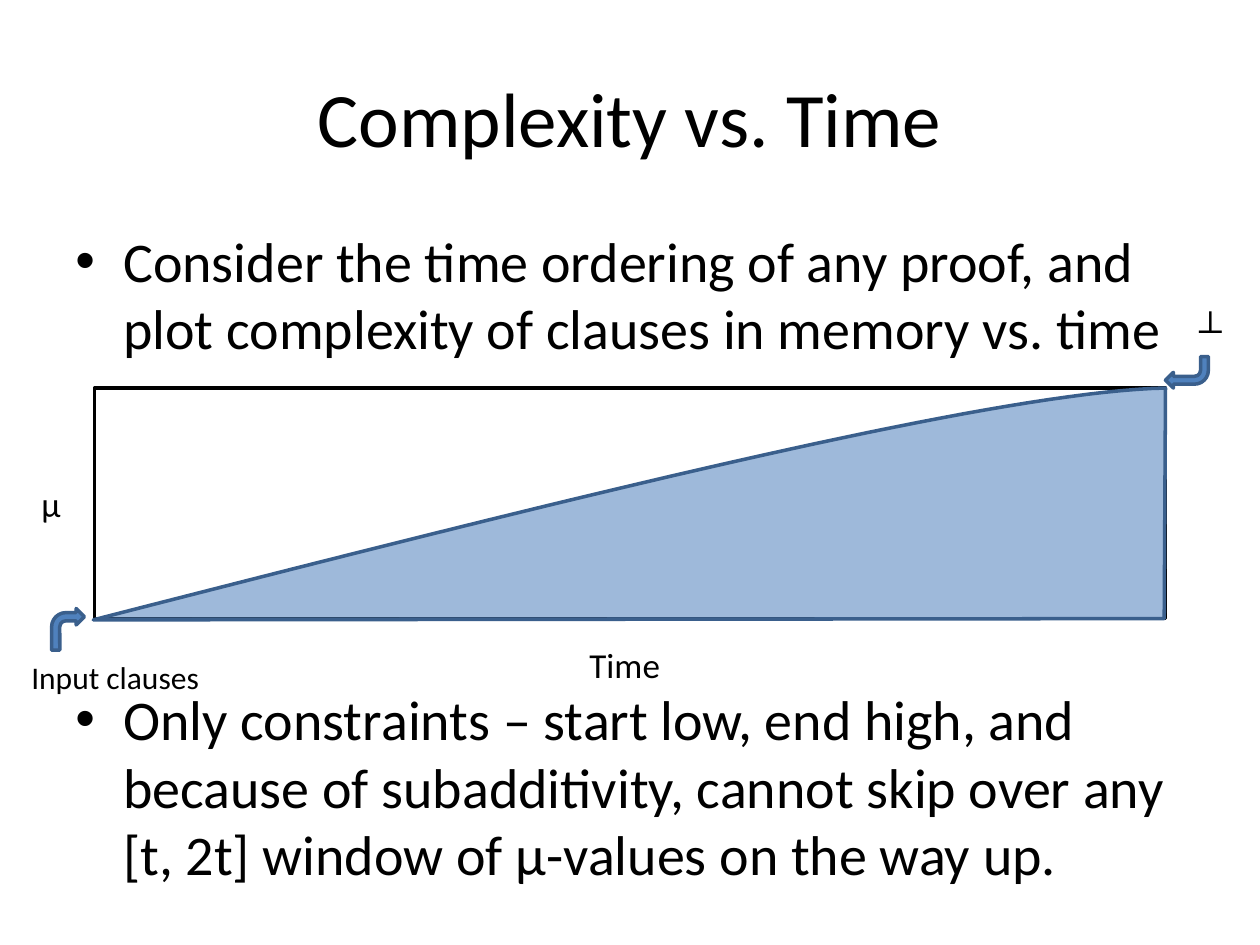
from lxml import etree
from pptx import Presentation
from pptx.dml.color import RGBColor
from pptx.enum.shapes import MSO_SHAPE as SHAPE
from pptx.enum.text import MSO_ANCHOR as ANCHOR, PP_ALIGN as ALIGN
from pptx.oxml.ns import qn
from pptx.util import Inches, Pt

BLACK = RGBColor(0x00, 0x00, 0x00)
BLUE = RGBColor(0x4F, 0x81, 0xBD)
DARK_BLUE = RGBColor(0x3A, 0x5F, 0x8C)


def add_text(tf, text, size=20, font="Calibri", align=ALIGN.LEFT,
             bullet=False, before=0, new=False):
    p = tf.add_paragraph() if new else tf.paragraphs[0]
    p.alignment = align
    p.space_before = Pt(before)
    r = p.add_run()
    r.text = text
    r.font.size = Pt(size)
    r.font.name = font
    r.font.color.rgb = BLACK
    if bullet:
        pPr = p._p.get_or_add_pPr()
        pPr.set("marL", str(Inches(0.38)))
        pPr.set("indent", str(-Inches(0.38)))
        etree.SubElement(pPr, qn("a:buFont")).set("typeface", "Arial")
        etree.SubElement(pPr, qn("a:buChar")).set("char", "•")


def style(s, fill, line):
    s.shadow.inherit = False
    if fill is None:
        s.fill.background()
    else:
        s.fill.solid()
        s.fill.fore_color.rgb = fill
    s.line.color.rgb = line
    s.line.width = Pt(2)


prs = Presentation()
prs.slide_width, prs.slide_height = Inches(10), Inches(7.5)
slide = prs.slides.add_slide(prs.slide_layouts[5])
shapes = slide.shapes

# Title
title = shapes.title
title.left, title.top = Inches(0.5), Inches(0.3)
title.width, title.height = Inches(9), Inches(1.25)
title.text_frame.vertical_anchor = ANCHOR.MIDDLE
add_text(title.text_frame, "Complexity vs. Time", size=44, align=ALIGN.CENTER)

# Bullets, with room for the plot between them
body = shapes.add_textbox(Inches(0.5), Inches(1.75), Inches(9), Inches(5.83))
tf = body.text_frame
tf.word_wrap = True
add_text(tf, "Consider the time ordering of any proof, and plot complexity "
         "of clauses in memory vs. time", size=32, bullet=True)
add_text(tf, "Only constraints – start low, end high, and because of "
         "subadditivity, cannot skip over any [t, 2t] window of μ-values "
         "on the way up.", size=32, bullet=True, before=185, new=True)

# Plot frame
frame = shapes.add_shape(SHAPE.RECTANGLE, Inches(0.75), Inches(3.08),
                         Inches(8.5), Inches(1.83))
style(frame, None, BLACK)

# Area under the complexity curve, a cubic Bezier
controls = [(0.74, 4.92), (4.29, 4.01), (7.85, 3.11), (9.25, 3.08)]
STEPS = 40
curve = []
for i in range(STEPS + 1):
    t = i / STEPS
    weights = ((1 - t) ** 3, 3 * t * (1 - t) ** 2, 3 * t * t * (1 - t), t ** 3)
    curve.append(tuple(Inches(sum(w * c[axis] for w, c in zip(weights, controls)))
                       for axis in (0, 1)))
builder = shapes.build_freeform(*curve[0])
builder.add_line_segments(curve[1:] + [(Inches(9.24), Inches(4.91))], close=True)
area = builder.convert_to_shape()
style(area, BLUE, DARK_BLUE)
color = area.fill._xPr.find(qn("a:solidFill"))[0]
etree.SubElement(color, qn("a:alpha")).set("val", "55000")

# Arrows to the start and end of the curve
for x, y, w, h, rotation in [(0.41, 4.83, 0.26, 0.33, 0),
                             (9.25, 2.83, 0.34, 0.25, 180)]:
    arrow = shapes.add_shape(SHAPE.BENT_ARROW, Inches(x), Inches(y),
                             Inches(w), Inches(h))
    arrow.rotation = rotation
    style(arrow, BLUE, DARK_BLUE)

# Axis and end point labels
for text, x, y, w, h, size, font in [
        ("Time", 4.58, 5.06, 0.77, 0.44, 20, "Calibri"),
        ("μ", 0.23, 3.78, 0.36, 0.44, 20, "Calibri"),
        ("Input clauses", 0.15, 5.17, 1.55, 0.4, 18, "Calibri"),
        ("⊥", 9.39, 2.35, 0.36, 0.4, 18, "Cambria")]:
    label = shapes.add_textbox(Inches(x), Inches(y), Inches(w), Inches(h))
    label.text_frame.word_wrap = False
    add_text(label.text_frame, text, size=size, font=font)

prs.save("out.pptx")
